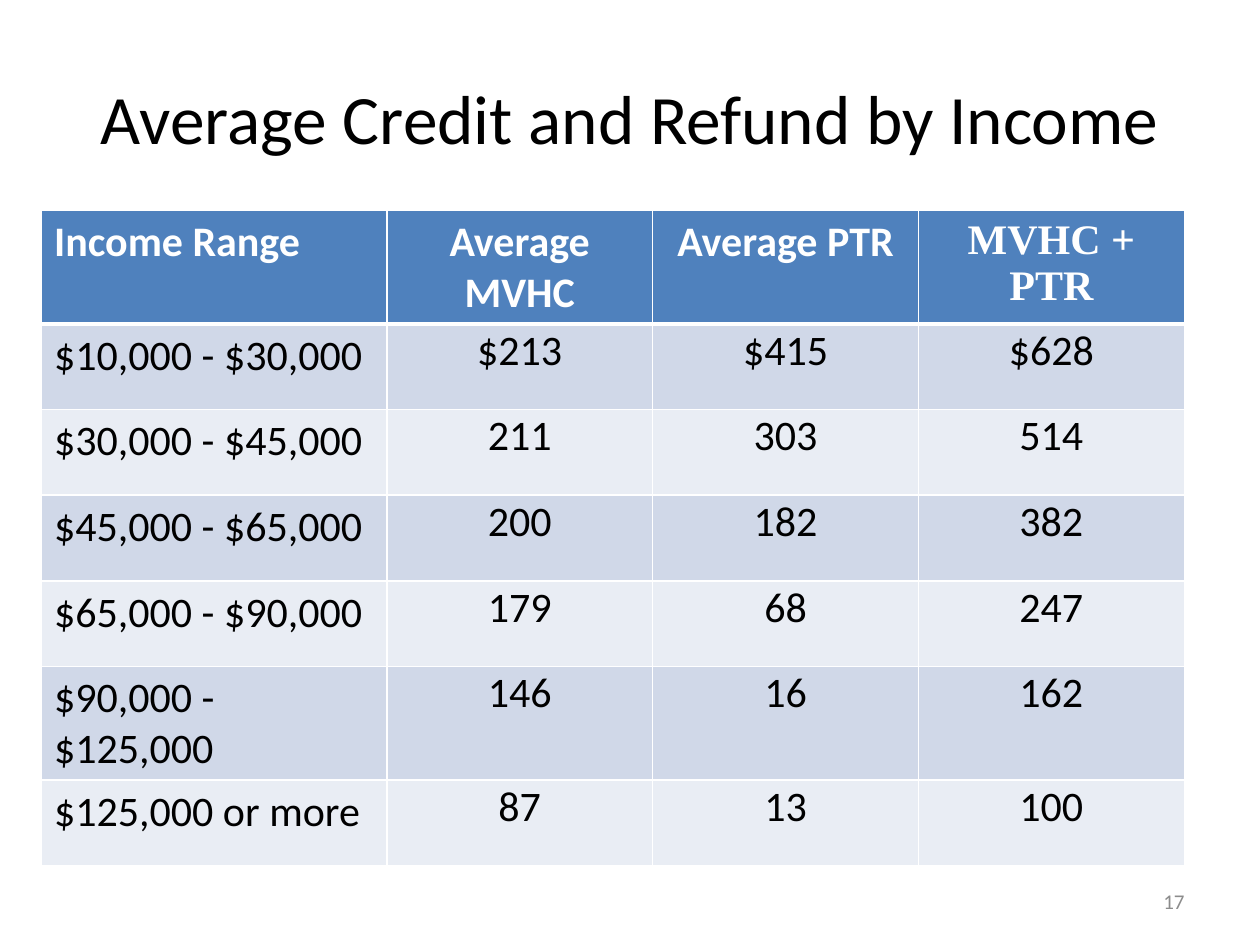
from lxml.etree import SubElement as Sub
from pptx import Presentation
from pptx.dml.color import RGBColor as Rgb
from pptx.enum.text import MSO_ANCHOR as Anchor, PP_ALIGN as Align
from pptx.oxml.ns import qn
from pptx.util import Inches, Pt

# Content
TITLE = "Average Credit and Refund by Income"
PAGE = "17"
HEAD = ["Income Range", "Average MVHC", "Average PTR", "MVHC + PTR"]
BODY = [
    ("$10,000 - $30,000", "$213", "$415", "$628"),
    ("$30,000 - $45,000", "211", "303", "514"),
    ("$45,000 - $65,000", "200", "182", "382"),
    ("$65,000 - $90,000", "179", "68", "247"),
    ("$90,000 - $125,000", "146", "16", "162"),
    ("$125,000 or more", "87", "13", "100"),
]

# Look
HUE = {"head": "4F81BD", "odd": "D0D8E8", "even": "E9EDF4",
       "white": "FFFFFF", "black": "000000", "gray": "8C8C8C"}
FONT, SERIF = "Calibri", "Times New Roman"

# Grid, in inches
WIDE, HIGH = 10, 7.5
EDGE = 0.05 * WIDE
LEFT, TOP = 0.33, 1.67
COLS = [2.74] + [2.11] * 3
ROW = 0.68


def style(frame, size, hue, align, font=FONT, bold=False):
    for para in frame.paragraphs:
        para.alignment = align
        for run in para.runs:
            run.font.size = Pt(size)
            run.font.name = font
            run.font.bold = bold
            run.font.color.rgb = Rgb.from_string(HUE[hue])


def label(slide, text, box, size, hue, align):
    frame = slide.shapes.add_textbox(*map(Inches, box)).text_frame
    frame.word_wrap = True
    frame.vertical_anchor = Anchor.MIDDLE
    frame.text = text
    style(frame, size, hue, align)


def border(cell, row):
    # The rule between header and body is thicker
    thick = {0: "lnB", 1: "lnT"}.get(row)
    props = cell._tc.get_or_add_tcPr()
    for side in ("lnL", "lnR", "lnT", "lnB"):
        width = Pt(3 if side == thick else 1)
        line = Sub(props, qn(f"a:{side}"), w=str(width))
        fill = Sub(line, qn("a:solidFill"))
        Sub(fill, qn("a:srgbClr"), val=HUE["white"])


def paint(cell, text, row, col):
    top = row == 0
    border(cell, row)
    band = "head" if top else "odd" if row % 2 else "even"
    cell.fill.solid()
    cell.fill.fore_color.rgb = Rgb.from_string(HUE[band])
    cell.text_frame.text = text
    if col and not top:
        cell.margin_left = cell.margin_right = cell.margin_top = Inches(0.01)
        cell.margin_bottom = 0
    style(cell.text_frame, 24, "white" if top else "black",
          Align.CENTER if col else Align.LEFT,
          SERIF if top and col == len(COLS) - 1 else FONT, top)


def main():
    deck = Presentation()
    deck.slide_width, deck.slide_height = Inches(WIDE), Inches(HIGH)
    slide = deck.slides.add_slide(deck.slide_layouts[6])

    # Title
    label(slide, TITLE, (EDGE, 0.3, WIDE - 2 * EDGE, 1.25),
          39.6, "black", Align.CENTER)

    # Table
    rows = [HEAD] + BODY
    box = (LEFT, TOP, sum(COLS), ROW * len(rows))
    table = slide.shapes.add_table(
        len(rows), len(COLS), *map(Inches, box)).table
    for col, width in zip(table.columns, COLS):
        col.width = Inches(width)
    for r, texts in enumerate(rows):
        table.rows[r].height = Inches(ROW)
        for c, text in enumerate(texts):
            paint(table.cell(r, c), text, r, c)

    # Page number
    wide = 2.33
    label(slide, PAGE, (WIDE - EDGE - wide, 6.95, wide, 0.4),
          12, "gray", Align.RIGHT)

    deck.save("out.pptx")


if __name__ == "__main__":
    main()
